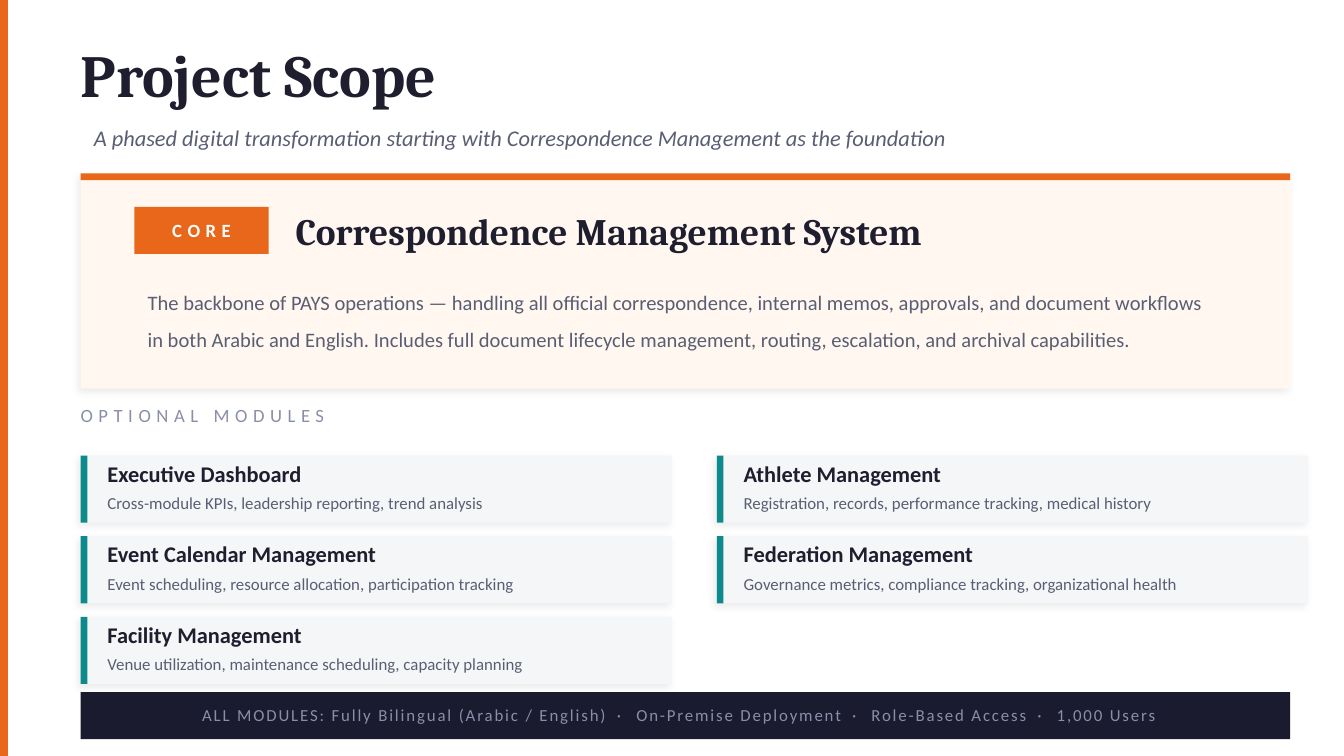
from dataclasses import dataclass

from lxml.etree import SubElement
from pptx import Presentation
from pptx.dml.color import RGBColor
from pptx.enum.shapes import MSO_SHAPE
from pptx.enum.text import MSO_ANCHOR, PP_ALIGN
from pptx.oxml.ns import qn
from pptx.util import Pt


@dataclass(frozen=True)
class Theme:
    orange: RGBColor = RGBColor(0xE8, 0x67, 0x1A)
    teal: RGBColor = RGBColor(0x0D, 0x8A, 0x8C)
    ink: RGBColor = RGBColor(0x1E, 0x1E, 0x2E)
    slate: RGBColor = RGBColor(0x5A, 0x5E, 0x72)
    muted: RGBColor = RGBColor(0x8A, 0x8F, 0xA8)
    white: RGBColor = RGBColor(0xFF, 0xFF, 0xFF)
    cream: RGBColor = RGBColor(0xFF, 0xF7, 0xF0)
    mist: RGBColor = RGBColor(0xF5, 0xF6, 0xF8)
    navy: RGBColor = RGBColor(0x1A, 0x1B, 0x2E)
    serif: str = "Cambria"
    sans: str = "Calibri"
    title: int = 32
    heading: int = 20
    subhead: int = 12
    body: int = 11
    label: int = 10
    small: int = 9


T = Theme()
LEFT = 43.2
WIDTH = 648
INSET = 7.2
CARD_W, CARD_H = 316.8, 36
COLUMN_STEP, ROW_STEP = 340.8, 43.2
CARDS_TOP = 244.08

MODULE_COLUMNS = [
    [
        ("Executive Dashboard", "Cross-module KPIs, leadership reporting, trend analysis"),
        ("Event Calendar Management", "Event scheduling, resource allocation, participation tracking"),
        ("Facility Management", "Venue utilization, maintenance scheduling, capacity planning"),
    ],
    [
        ("Athlete Management", "Registration, records, performance tracking, medical history"),
        ("Federation Management", "Governance metrics, compliance tracking, organizational health"),
    ],
]

FOOTER_ITEMS = [
    "ALL MODULES: Fully Bilingual (Arabic / English)",
    "On-Premise Deployment",
    "Role-Based Access",
    "1,000 Users",
]


def add_soft_shadow(sp):
    effects = sp._element.spPr.find(qn("a:effectLst"))
    shadow = SubElement(effects, qn("a:outerShdw"), blurRad=str(Pt(4)),
                        dist=str(Pt(2)), dir=str(135 * 60000),
                        algn="bl", rotWithShape="0")
    color = SubElement(shadow, qn("a:srgbClr"), val="000000")
    SubElement(color, qn("a:alpha"), val="8000")


def add_rect(s, x, y, w, h, color, soft=False):
    sp = s.shapes.add_shape(MSO_SHAPE.RECTANGLE, Pt(x), Pt(y), Pt(w), Pt(h))
    sp.shadow.inherit = False
    sp.fill.solid()
    sp.fill.fore_color.rgb = color
    sp.line.fill.background()
    if soft:
        add_soft_shadow(sp)
    return sp


def add_run(p, text, tracking=0):
    r = p.add_run()
    r.text = text
    if tracking:
        r._r.get_or_add_rPr().set("spc", str(tracking * 100))


def style_text(tf, size, color, face=T.sans, bold=False, italic=False,
               align=PP_ALIGN.LEFT, inset=0):
    tf.word_wrap = True
    tf.vertical_anchor = MSO_ANCHOR.MIDDLE
    tf.margin_left = tf.margin_right = Pt(inset)
    tf.margin_top = tf.margin_bottom = Pt(inset / 2)
    p = tf.paragraphs[0]
    p.alignment = align
    p.font.name = face
    p.font.size = Pt(size)
    p.font.color.rgb = color
    p.font.bold = bold
    p.font.italic = italic
    return p


def add_text(s, x, y, w, h, text, size, color, tracking=0, **style):
    tf = s.shapes.add_textbox(Pt(x), Pt(y), Pt(w), Pt(h)).text_frame
    p = style_text(tf, size, color, **style)
    add_run(p, text, tracking)
    return p


def add_header(s):
    add_rect(s, 0, 0, 4.32, 405, T.orange)
    add_text(s, LEFT, 21.6, WIDTH, 36, "Project Scope", T.title, T.ink,
             face=T.serif, bold=True)
    add_text(s, LEFT, 61.2, 612, 25.2,
             "A phased digital transformation starting with Correspondence "
             "Management as the foundation",
             T.subhead, T.slate, italic=True, inset=INSET)


def add_core_panel(s):
    top = 92.88
    add_rect(s, LEFT, top, WIDTH, 115.2, T.cream, soft=True)
    add_rect(s, LEFT, top, WIDTH, 3.6, T.orange)
    badge = add_rect(s, 72, top + 18, 72, 25.2, T.orange)
    p = style_text(badge.text_frame, T.label, T.white, bold=True,
                   align=PP_ALIGN.CENTER, inset=INSET)
    add_run(p, "CORE", 3)
    add_text(s, 158.4, top + 14.4, 360, 32.4, "Correspondence Management System",
             T.heading, T.ink, face=T.serif, bold=True)
    p = add_text(s, 72, top + 50.4, 590.4, 50.4,
                 "The backbone of PAYS operations — handling all official "
                 "correspondence, internal memos, approvals, and document "
                 "workflows in both Arabic and English. Includes full document "
                 "lifecycle management, routing, escalation, and archival "
                 "capabilities.",
                 T.body, T.slate, inset=INSET)
    p.line_spacing = 1.5


def add_module_card(s, x, y, name, summary):
    add_rect(s, x, y, CARD_W, CARD_H, T.mist, soft=True)
    add_rect(s, x, y, 3.6, CARD_H, T.teal)
    add_text(s, x + 14.4, y + 1.44, 288, 15.84, name, T.subhead, T.ink, bold=True)
    add_text(s, x + 14.4, y + 17.28, 288, 15.84, summary, T.small, T.slate)


def add_modules(s):
    add_text(s, LEFT, 211.68, 288, 21.6, "OPTIONAL MODULES", T.label, T.muted,
             tracking=3)
    for col, modules in enumerate(MODULE_COLUMNS):
        for row, (name, summary) in enumerate(modules):
            add_module_card(s, LEFT + col * COLUMN_STEP,
                            CARDS_TOP + row * ROW_STEP, name, summary)


def add_footer(s):
    add_rect(s, LEFT, 370.8, WIDTH, 25.2, T.navy)
    first, *rest = FOOTER_ITEMS
    p = add_text(s, 57.6, 372.24, 612, 21.6, first, T.small, T.muted, tracking=1,
                 align=PP_ALIGN.CENTER, inset=INSET)
    for item in rest:
        add_run(p, " · ", 3)
        add_run(p, item, 1)


def main():
    prs = Presentation()
    prs.slide_width, prs.slide_height = Pt(720), Pt(405)
    s = prs.slides.add_slide(prs.slide_layouts[6])
    add_header(s)
    add_core_panel(s)
    add_modules(s)
    add_footer(s)
    prs.save("out.pptx")


if __name__ == "__main__":
    main()
